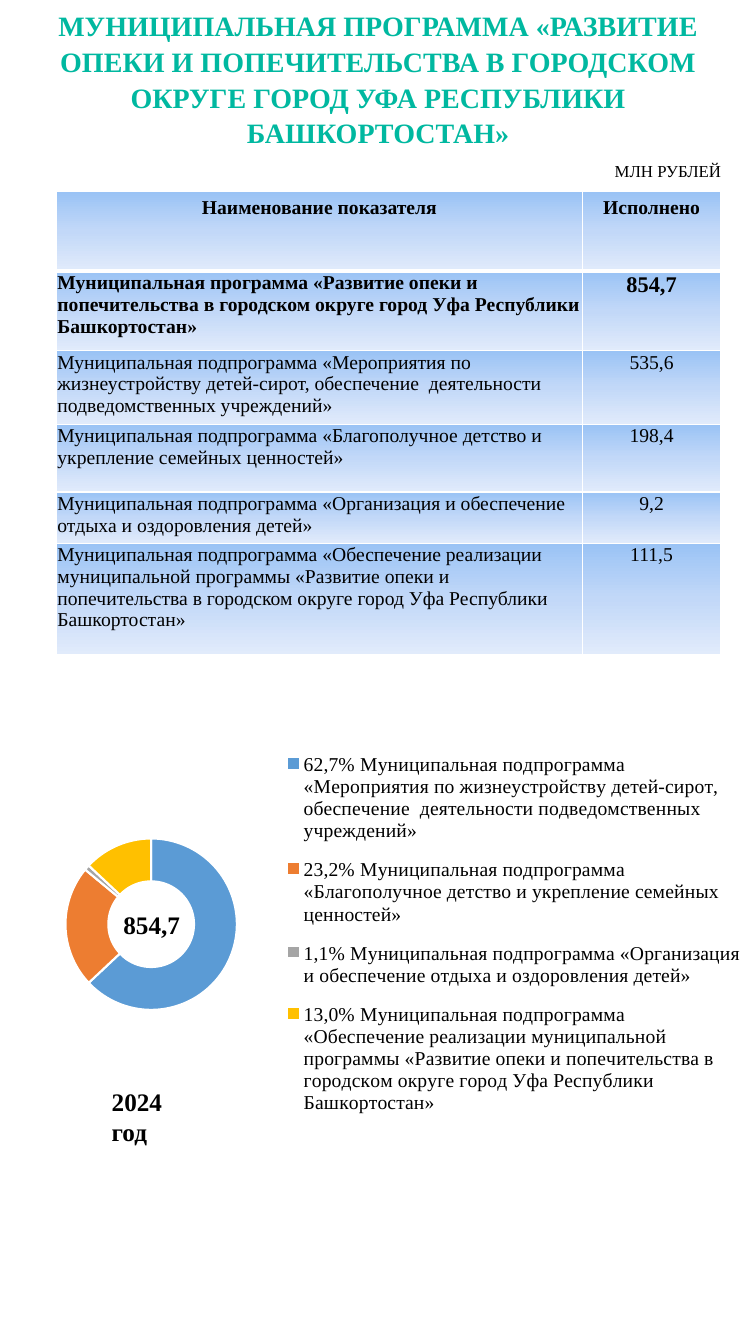
from lxml import etree
from pptx import Presentation
from pptx import util as u
from pptx.chart import data
from pptx.dml.color import RGBColor
from pptx.enum import chart as ch, text as t
from pptx.oxml import ns, parse_xml

HUES = {
    "title": "00B8A0", "ink": "000000", "line": "FFFFFF",
    "top": "9AC3F5", "mid": "C2D8F8", "low": "E1EBFB",
    "blue": "5B9BD5", "red": "ED7D31", "gray": "A5A5A5", "gold": "FFC000",
}
SERIF = "Times New Roman"
MAIN = ("Муниципальная программа «Развитие опеки и попечительства "
        "в городском округе город Уфа Республики Башкортостан»")
PARTS = [
    ("Мероприятия по жизнеустройству детей-сирот, обеспечение  деятельности "
     "подведомственных учреждений»", "535,6", "62,7%", 63, "blue"),
    ("Благополучное детство и укрепление семейных ценностей»",
     "198,4", "23,2%", 23, "red"),
    ("Организация и обеспечение отдыха и оздоровления детей»",
     "9,2", "1,1%", 1, "gray"),
    ("Обеспечение реализации муниципальной программы «Развитие опеки и "
     "попечительства в городском округе город Уфа Республики Башкортостан»",
     "111,5", "13,0%", 13, "gold"),
]


def tint(key):
    return RGBColor.from_string(HUES[key])


def style(font, size, hue="ink", bold=False, face=SERIF):
    font.name, font.size, font.bold = face, u.Pt(size), bold
    font.color.rgb = tint(hue)


def write(frame, words, size=14, hue="ink", bold=False, align=t.PP_ALIGN.LEFT):
    para = frame.paragraphs[0]
    para.alignment = align
    run = para.add_run()
    run.text = words
    style(run.font, size, hue, bold)
    return para


def place(node, spot, box, inner=False):
    for old in node.findall(ns.qn("c:layout")):
        node.remove(old)
    layout = parse_xml(f'<c:layout {ns.nsdecls("c")}><c:manualLayout/></c:layout>')
    rule = [("layoutTarget", "inner")] if inner else []
    rule += [("xMode", "edge"), ("yMode", "edge"), *zip("xywh", box)]
    for tag, val in rule:
        etree.SubElement(layout[0], ns.qn("c:" + tag)).set("val", str(val))
    node.insert(spot, layout)


class Page:
    def __init__(self, deck):
        self.slide = deck.slides.add_slide(deck.slide_layouts[5])
        self.shapes = self.slide.shapes

    def title(self, words, box):
        head = self.shapes.title
        head.left, head.top, head.width, head.height = map(u.Inches, box)
        frame = head.text_frame
        frame.word_wrap = True
        frame.auto_size = t.MSO_AUTO_SIZE.NONE
        frame.vertical_anchor = t.MSO_ANCHOR.MIDDLE
        para = write(frame, words, size=20, hue="title", bold=True,
                     align=t.PP_ALIGN.CENTER)
        para.line_spacing, para.space_after = 1.07, u.Pt(8)

    def label(self, words, box, wrap=True, anchor=t.MSO_ANCHOR.TOP, **form):
        frame = self.shapes.add_textbox(*map(u.Inches, box)).text_frame
        frame.word_wrap = wrap
        frame.vertical_anchor = anchor
        write(frame, words, **form)

    def paint(self, cell, head, below):
        prop = cell._tc.get_or_add_tcPr()
        for side in "LRTB":
            wide = 3 if side == "B" and head or side == "T" and below else 1
            prop.append(parse_xml(
                f'<a:ln{side} {ns.nsdecls("a")} w="{u.Pt(wide)}"><a:solidFill>'
                f'<a:srgbClr val="{HUES["line"]}"/></a:solidFill></a:ln{side}>'))
        stops = "".join(
            f'<a:gs pos="{pos}"><a:srgbClr val="{HUES[key]}"/></a:gs>'
            for pos, key in ((0, "top"), (50000, "mid"), (100000, "low")))
        prop.append(parse_xml(
            f'<a:gradFill {ns.nsdecls("a")} rotWithShape="1"><a:gsLst>{stops}'
            '</a:gsLst><a:lin ang="5400000" scaled="0"/></a:gradFill>'))

    def table(self, rows, box, wides, highs):
        grid = self.shapes.add_table(len(rows), len(wides), *map(u.Inches, box)).table
        grid.horz_banding = False
        for col, wide in zip(grid.columns, wides):
            col.width = u.Inches(wide)
        for i, (row, high) in enumerate(zip(rows, highs)):
            grid.rows[i].height = u.Inches(high)
            for j, words in enumerate(row):
                cell = grid.cell(i, j)
                if i:
                    cell.margin_left = cell.margin_right = u.Inches(0.01)
                    cell.margin_top, cell.margin_bottom = u.Inches(0.01), 0
                mid = i == 0 or j == 1
                write(cell.text_frame, words, size=16 if (i, j) == (1, 1) else 14,
                      bold=i < 2,
                      align=t.PP_ALIGN.CENTER if mid else t.PP_ALIGN.LEFT)
                self.paint(cell, i == 0, i == 1)

    def ring(self, names, vals, keys, box):
        info = data.CategoryChartData()
        info.categories = names
        info.add_series("Series 1", vals)
        info.add_series("Series 2", [None] * len(vals))
        chart = self.shapes.add_chart(
            ch.XL_CHART_TYPE.DOUGHNUT, *map(u.Inches, box), info).chart
        style(chart.font, 10, face="Calibri")
        chart.has_title = False
        chart.has_legend = True
        key = chart.legend
        key.position = ch.XL_LEGEND_POSITION.RIGHT
        key.include_in_layout = False
        style(key.font, 14)
        place(key._element, 1, (0.38, 0.08, 0.6, 0.83))
        plot = chart.plots[0]
        plot._element.find(ns.qn("c:holeSize")).set("val", "75")
        place(plot._element.getparent(), 0, (0.03, 0.18, 0.34, 0.59), inner=True)
        for line in plot.series:
            for i, hue in enumerate(keys):
                form = line.points[i].format
                form.fill.solid()
                form.fill.fore_color.rgb = tint(hue)
                form.line.color.rgb = tint("line")
                form.line.width = u.Pt(1.5)


def main():
    deck = Presentation()
    deck.slide_width, deck.slide_height = u.Inches(7.5), u.Inches(13.33)
    page = Page(deck)
    page.title("МУНИЦИПАЛЬНАЯ ПРОГРАММА «РАЗВИТИЕ ОПЕКИ И ПОПЕЧИТЕЛЬСТВА "
               "В ГОРОДСКОМ ОКРУГЕ ГОРОД УФА РЕСПУБЛИКИ БАШКОРТОСТАН»",
               (0, 0, 7.5, 1.54))
    names = ["Муниципальная подпрограмма «" + part[0] for part in PARTS]
    page.ring([f"{part[2]} {name}" for part, name in zip(PARTS, names)],
              [part[3] for part in PARTS], [part[4] for part in PARTS],
              (0, 6.93, 7.5, 4.71))
    page.label("854,7", (0.91, 8.82, 1.19, 0.69), anchor=t.MSO_ANCHOR.MIDDLE,
               size=18, bold=True, align=t.PP_ALIGN.CENTER)
    rows = [("Наименование показателя", "Исполнено"), (MAIN, "854,7")]
    rows += [(name, part[1]) for part, name in zip(PARTS, names)]
    page.table(rows, (0.56, 1.9, 6.59, 4.6), (5.22, 1.37),
               (0.79, 0.79, 0.73, 0.67, 0.51, 1.1))
    page.label("2024 год", (1.01, 10.72, 1.11, 0.45), wrap=False, size=18, bold=True)
    page.label("МЛН РУБЛЕЙ", (6, 1.54, 1.5, 0.3), size=12)
    deck.save("out.pptx")


if __name__ == "__main__":
    main()
